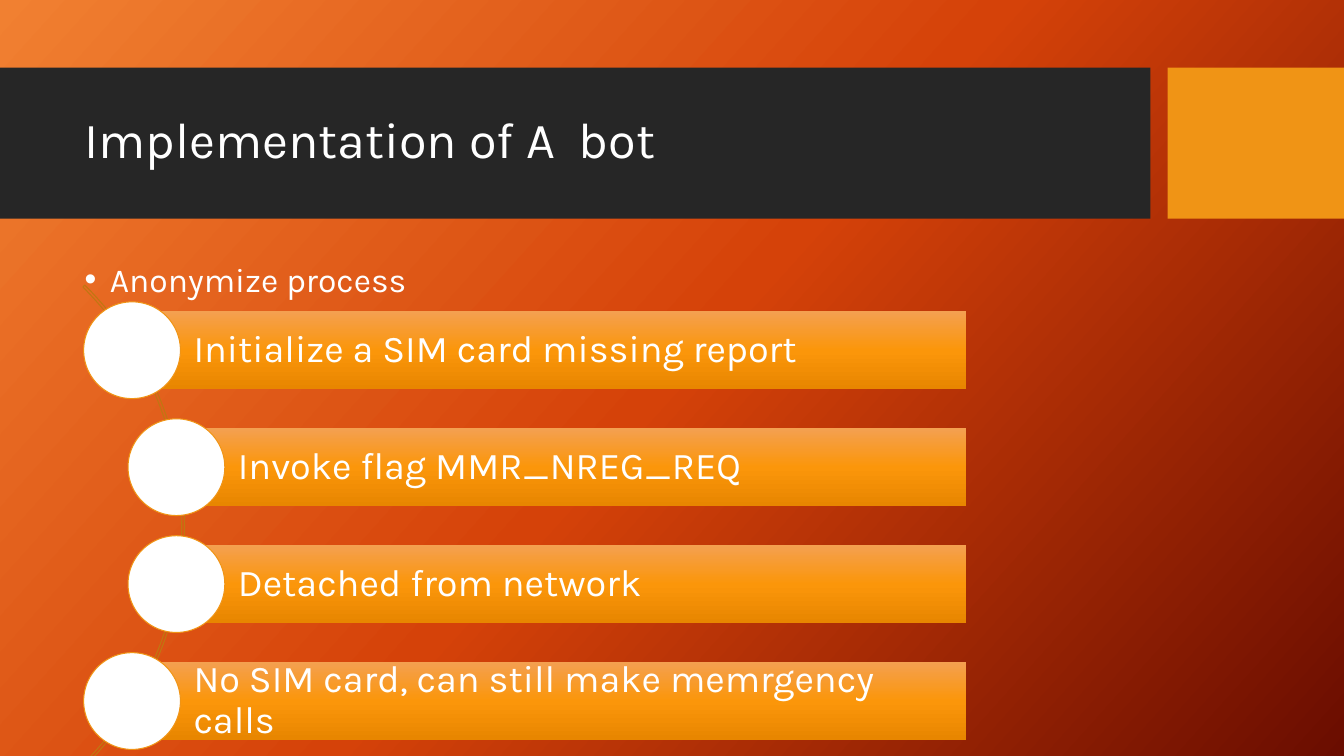
from copy import deepcopy

from pptx import Presentation
from pptx.dml.color import RGBColor
from pptx.enum.shapes import MSO_SHAPE as Shape
from pptx.enum.text import MSO_ANCHOR as Anchor, MSO_AUTO_SIZE as AutoSize, PP_ALIGN as Align
from pptx.oxml import parse_xml
from pptx.oxml.ns import nsdecls, qn
from pptx.util import Inches, Pt

STEPS = [
    ("Initialize a SIM card missing report", 0.83),
    ("Invoke flag MMR_NREG_REQ", 1.27),
    ("Detached from network", 1.27),
    ("No SIM card, can still make memrgency calls", 0.83),
]
FIRST_BAR_TOP, STEP_PITCH = 3.09, 1.16
BAR_HEIGHT, BAR_RIGHT, DOT_SIZE = 0.77, 9.58, 0.96


def color(code):
    return RGBColor.from_string(code)


def set_format(target, values):
    for name, value in values.items():
        setattr(target, name, value)


def set_gradient(fill, owner, codes, angle):
    """Fill with evenly spaced colours; the angle runs clockwise."""
    fill.gradient()
    fill.gradient_angle = 360 - angle
    stop_list = next(owner.iter(qn("a:gsLst")))
    for _ in codes[2:]:
        stop_list.insert(1, deepcopy(stop_list[0]))
    for index, (stop, code) in enumerate(zip(fill.gradient_stops, codes)):
        stop.color.rgb = color(code)
        stop.position = index / (len(codes) - 1)


class SlideBuilder:
    FONT, WHITE, ORANGE, DARK, ARC = "Karla", "FFFFFF", "F09415", "262626", "C07711"
    BACKDROP = ["F18031", "D54209", "6A0D00"]
    BAR = ["F4A050", "FB960A", "E88600"]

    def __init__(self, deck):
        self.page = deck.slides.add_slide(deck.slide_layouts[1])
        set_gradient(self.page.background.fill, self.page.element, self.BACKDROP, 42)

    def shape(self, kind, bounds, fill=None, line=None):
        shape = self.page.shapes.add_shape(kind, *map(Inches, bounds))
        shape.shadow.inherit = False
        if fill:
            shape.fill.solid()
            shape.fill.fore_color.rgb = color(fill)
        else:
            shape.fill.background()
        if line:
            shape.line.color.rgb = color(line)
            shape.line.width = Pt(0.75)
        else:
            shape.line.fill.background()
        return shape

    def label(self, box, text, size, anchor, insets=(0.1, 0.05, 0.1, 0.05), bullet=None):
        frame = box.text_frame
        left, top, right, bottom = map(Inches, insets)
        set_format(frame, {
            "text": text, "word_wrap": True, "auto_size": AutoSize.NONE,
            "vertical_anchor": anchor, "margin_left": left, "margin_top": top,
            "margin_right": right, "margin_bottom": bottom,
        })
        para = frame.paragraphs[0]
        if bullet:
            properties = para._p.get_or_add_pPr()
            properties.set("marL", str(Inches(0.25)))
            properties.set("indent", str(-Inches(0.25)))
            properties.append(parse_xml(f'<a:buChar {nsdecls("a")} char="{bullet}"/>'))
        set_format(para, {"alignment": Align.LEFT, "line_spacing": 0.9, "space_before": Pt(0)})
        span = para.runs[0]
        set_format(span.font, {"name": self.FONT, "size": Pt(size)})
        span.font.color.rgb = color(self.WHITE)

    def placeholder(self, index, bounds, text, size, anchor, bullet=None):
        """Place a template placeholder in front of the shapes drawn so far."""
        box = self.page.placeholders[index]
        set_format(box, dict(zip(("left", "top", "width", "height"), map(Inches, bounds))))
        self.page.shapes._spTree.append(box._element)
        self.label(box, text, size, anchor, bullet=bullet)

    def arc(self, bounds):
        arc = self.shape(Shape.BLOCK_ARC, bounds, line=self.ARC)
        for index, value in enumerate((189, 27, 0.004)):
            arc.adjustments[index] = value

    def step(self, text, dot_left, bar_top):
        radius = DOT_SIZE / 2
        bar_left = dot_left + radius
        bar = self.shape(Shape.RECTANGLE, (bar_left, bar_top, BAR_RIGHT - bar_left, BAR_HEIGHT))
        set_gradient(bar.fill, bar._element, self.BAR, 90)
        self.label(bar, text, 27, Anchor.MIDDLE, (0.61, 0.07, 0.07, 0.07))
        dot_top = bar_top + BAR_HEIGHT / 2 - radius
        self.shape(Shape.OVAL, (dot_left, dot_top, DOT_SIZE, DOT_SIZE), self.WHITE, self.ORANGE)


def main():
    deck = Presentation()
    deck.slide_width, deck.slide_height = Inches(13.33), Inches(7.5)
    slide = SlideBuilder(deck)
    slide.shape(Shape.RECTANGLE, (0, 0.67, 11.41, 1.5), slide.DARK)
    slide.shape(Shape.RECTANGLE, (11.58, 0.67, 1.75, 1.5), slide.ORANGE)
    slide.placeholder(0, (0.74, 0.82, 10.51, 1.18), "Implementation of A  bot", 36, Anchor.MIDDLE)
    slide.placeholder(1, (0.74, 2.56, 10.51, 3.94), "Anonymize process", 24, Anchor.TOP, "•")
    slide.arc((-4.92, 1.84, 6.75, 6.75))
    for row, (text, dot_left) in enumerate(STEPS):
        slide.step(text, dot_left, FIRST_BAR_TOP + row * STEP_PITCH)
    deck.save("out.pptx")


if __name__ == "__main__":
    main()
